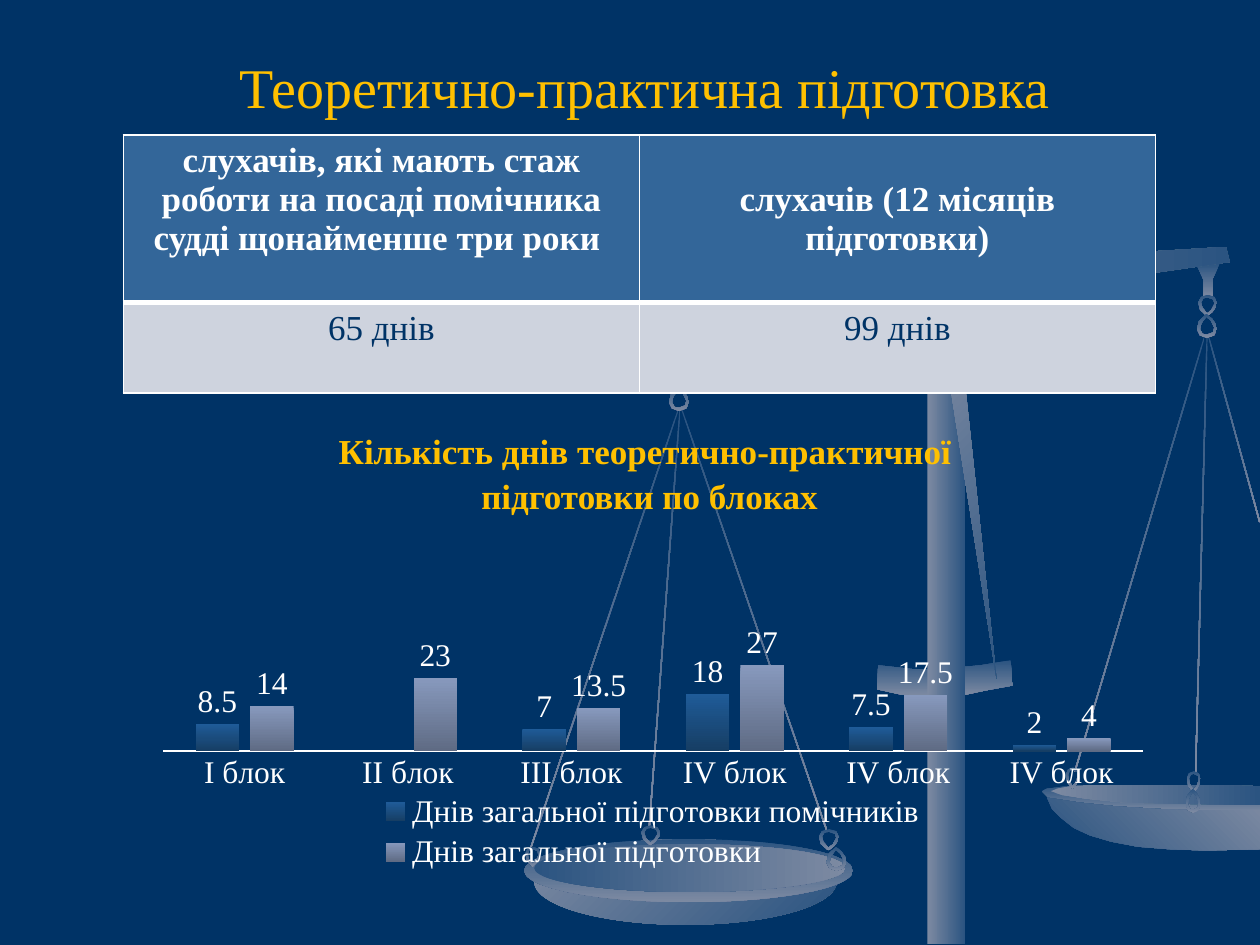
import pptx
import pptx.util
import pptx.chart.data
import pptx.dml.color
import pptx.enum.chart
import pptx.enum.shapes
import pptx.enum.text
import pptx.oxml
import pptx.oxml.ns

FONT = "Times New Roman"
GOLD, WHITE, NAVY, BLUE, PALE = "FFC000", "FFFFFF", "003366", "336699", "CED3DE"
DARK, LIGHT = "2B5481", "7D8AA2"
TITLE = "Теоретично-практична підготовка"
HEADING = ["Кількість днів теоретично-практичної ", "підготовки по блоках"]
ROWS = [
    ["слухачів, які мають стаж роботи на посаді помічника судді щонайменше три роки ",
     "слухачів (12 місяців підготовки)"],
    ["65 днів", "99 днів"],
]
HEIGHTS = [1.33, 0.72]
CATS = ["І блок", "ІІ блок", "ІІІ блок", "IV блок", "IV блок", "IV блок"]
SERIES = [
    ("Днів загальної підготовки помічників", [8.5, None, 7, 18, 7.5, 2], "1F5B98", "163E64"),
    ("Днів загальної підготовки ", [14, 23, 13.5, 27, 17.5, 4], "8799BD", "5F6B84"),
]
PLOT = {"x": 0.019, "y": 0.41, "w": 0.963, "h": 0.256}

CORDS = [(9.04, 2.6, 3.6, 16.6), (9.53, 2.66, 3.47, 1.5), (9.79, 2.64, 1.53, 344.6),
         (5.98, 3.15, 3.53, 341), (4.79, 3.16, 3.68, 18.6), (5.27, 3.25, 3.31, 4.2)]
BRACE = [(6.97, 5.28), (7.24, 5.31), (7.39, 5.31), (7.57, 5.3), (7.78, 5.28), (8.02, 5.24),
         (8.04, 5.44), (7.82, 5.48), (7.68, 5.51), (7.51, 5.52), (7.33, 5.52), (7.14, 5.51),
         (6.96, 5.47)]
RIM = [(9.58, 6.24), (9.1, 6.24), (8.75, 6.23), (8.46, 6.24), (8.31, 6.26), (8.27, 6.28),
       (8.32, 6.33), (8.42, 6.36), (8.63, 6.39), (8.94, 6.42), (9.35, 6.44), (9.58, 6.45),
       (10, 6.45), (10, 6.26), (9.8, 6.26)]
BOWL = [(8.31, 6.33), (8.35, 6.42), (8.42, 6.49), (8.52, 6.57), (8.65, 6.63), (8.82, 6.68),
        (9.03, 6.72), (9.28, 6.74), (9.57, 6.75), (10, 6.74), (10, 6.43), (9.53, 6.43),
        (9.18, 6.42), (8.86, 6.4), (8.57, 6.37)]
DISH = [(9.56, 6.23), (8.77, 6.23), (8.51, 6.24), (8.39, 6.26), (8.34, 6.28), (8.43, 6.31),
        (8.63, 6.34), (8.93, 6.37), (9.33, 6.38), (10, 6.39), (10, 6.24)]
BEAM = [(9.73, 1.96), (9.76, 2.08), (5.25, 2.73), (5.24, 2.64), (7.37, 2.12), (7.59, 2.09)]
STAY = [(7.91, 5.39), (7.5, 2.8), (7.48, 2.68), (7.6, 2.65), (7.63, 2.77)]
DOME = [(7.52, 2.47), (7.63, 2.48), (7.72, 2.53), (7.77, 2.6), (7.79, 2.71), (7.24, 2.71),
        (7.26, 2.6), (7.32, 2.53), (7.4, 2.48)]
HOOK = [(1, 0), (0, 0.07), (0.28, 0.47), (0.28, 1), (0.7, 1), (0.7, 0.45)]
DROP = [[(0.47, 1), (0.75, 0.8), (0.95, 0.55), (1, 0.35), (0.85, 0.1), (0.5, 0), (0.15, 0.1),
         (0, 0.35), (0.1, 0.7)],
        [(0.5, 0.13), (0.8, 0.22), (0.86, 0.42), (0.7, 0.7), (0.47, 0.87), (0.22, 0.6),
         (0.15, 0.35), (0.28, 0.16)]]
HOOKS = [(5.31, 2.68, 0.18, 0.27), (9.5, 2.09, 0.18, 0.27)]
LINKS = [(8.46, 6.09, 0.11, 0.17, 0), (5.31, 2.93, 0.16, 0.17, 0), (5.31, 3.07, 0.16, 0.19, 1),
         (9.51, 2.34, 0.15, 0.17, 0), (9.5, 2.49, 0.16, 0.19, 1), (9.42, 6.12, 0.11, 0.17, 0),
         (5.09, 6.55, 0.15, 0.16, 0), (6.56, 6.72, 0.16, 0.19, 1), (4.17, 6.72, 0.12, 0.16, 0),
         (6.5, 6.58, 0.16, 0.17, 0), (9.41, 6.26, 0.12, 0.19, 1)]
PANS = [(4.24, 6.66, 2.4, 0.68, LIGHT, DARK, 45), (4.16, 6.66, 2.61, 0.5, DARK, LIGHT, 90),
        (4.24, 6.7, 2.47, 0.38, DARK, LIGHT, 0)]

KIND = pptx.enum.shapes.MSO_SHAPE
MID = pptx.enum.text.PP_ALIGN.CENTER
Pt = pptx.util.Pt


def inch(*nums):
    return [pptx.util.Cm(n * 2.54) for n in nums]


def tint(code):
    return pptx.dml.color.RGBColor.from_string(code)


def paint(fill, code):
    fill.solid()
    fill.fore_color.rgb = tint(code)


def blend(fill, start, end, angle):
    fill.gradient()
    fill.gradient_angle = (360 - angle) % 360
    for stop, code in zip(fill.gradient_stops, (start, end)):
        stop.color.rgb = tint(code)


def style(font, size, code, bold=False):
    font.name, font.size, font.bold = FONT, Pt(size), bold
    font.color.rgb = tint(code)


def write(para, text, size, code, bold=False):
    para.alignment = MID
    run = para.add_run()
    run.text = text
    style(run.font, size, code, bold)


def finish(shape, start=DARK, end=LIGHT, angle=90):
    shape.shadow.inherit = False
    shape.line.fill.background()
    blend(shape.fill, start, end, angle)
    return shape


def preset(slide, kind, box, *look):
    return finish(slide.shapes.add_shape(kind, *inch(*box)), *look)


def trace(slide, loops, *look):
    loops = [[inch(*spot) for spot in loop] for loop in loops]
    pen = slide.shapes.build_freeform(*loops[0][0])
    for loop in loops:
        if loop is not loops[0]:
            pen.move_to(*loop[0])
        pen.add_line_segments(loop[1:])
    return finish(pen.convert_to_shape(), *look)


def fit(loop, x, y, w, h, flip=0):
    return [(x + w * u, y + h * (1 - v if flip else v)) for u, v in loop]


def scales(slide):
    preset(slide, KIND.RECTANGLE, (7.34, 2.37, 0.34, 0.18))
    preset(slide, KIND.OVAL, (7.46, 2.06, 0.08, 0.08))
    for x, y, long, turn in CORDS:
        preset(slide, KIND.RECTANGLE, (x, y, 0.01, long)).rotation = turn
    trace(slide, [BRACE])
    trace(slide, [RIM])
    trace(slide, [BOWL], DARK, LIGHT, 315)
    trace(slide, [DISH], LIGHT, DARK, 0)
    for box in HOOKS:
        trace(slide, [fit(HOOK, *box)])
    trace(slide, [BEAM], LIGHT, DARK, 0)
    for *box, start, end, angle in PANS:
        preset(slide, KIND.OVAL, box, start, end, angle)
    for link in LINKS:
        trace(slide, [fit(loop, *link) for loop in DROP])
    preset(slide, KIND.RECTANGLE, (7.36, 3.08, 0.3, 4.41), LIGHT, DARK, 0)
    preset(slide, KIND.RECTANGLE, (7.44, 2.68, 0.13, 0.42))
    preset(slide, KIND.ROUNDED_RECTANGLE, (7.33, 3.03, 0.36, 0.09))
    trace(slide, [STAY], LIGHT, DARK, 45)
    trace(slide, [DOME], LIGHT, DARK, 0)


def border(cell, low):
    props = cell._tc.get_or_add_tcPr()
    for spot, (side, wide) in enumerate([("L", 1), ("R", 1), ("T", 1), ("B", low)]):
        props.insert(spot, pptx.oxml.parse_xml(
            f'<a:ln{side} {pptx.oxml.ns.nsdecls("a")} w="{wide * 12700}"><a:solidFill>'
            f'<a:srgbClr val="{WHITE}"/></a:solidFill></a:ln{side}>'))


def grid(slide):
    table = slide.shapes.add_table(2, 2, *inch(0.98, 1.07, 8.19, sum(HEIGHTS))).table
    table.horz_banding = False
    for r, texts in enumerate(ROWS):
        table.rows[r].height = inch(HEIGHTS[r])[0]
        for c, text in enumerate(texts):
            cell = table.cell(r, c)
            paint(cell.fill, PALE if r else BLUE)
            border(cell, 1 if r else 3)
            write(cell.text_frame.paragraphs[0], text, 20, NAVY if r else WHITE, not r)
    table.cell(0, 1).margin_top = inch(0.36)[0]


def graph(slide):
    data = pptx.chart.data.CategoryChartData()
    data.categories = CATS
    for name, vals, *_ in SERIES:
        data.add_series(name, vals)
    enum = pptx.enum.chart
    chart = slide.shapes.add_chart(enum.XL_CHART_TYPE.COLUMN_CLUSTERED,
                                   *inch(1.14, 3.99, 8.08, 2.96), data).chart
    style(chart.font, 18, WHITE)
    chart.has_title = False
    chart.has_legend = True
    chart.legend.position = enum.XL_LEGEND_POSITION.BOTTOM
    chart.legend.include_in_layout = False
    axis = chart.category_axis
    axis.major_tick_mark = enum.XL_TICK_MARK.NONE
    axis.format.line.color.rgb = tint(WHITE)
    chart.value_axis.visible = False
    chart.value_axis.has_major_gridlines = False
    chart.value_axis.minimum_scale, chart.value_axis.maximum_scale = 0, 30
    plot = chart.plots[0]
    plot.gap_width, plot.overlap, plot.vary_by_categories = 150, -25, False
    for bars, (_, _, top, low) in zip(plot.series, SERIES):
        blend(bars.format.fill, top, low, 90)
        bars.data_labels.show_value = True
        bars.data_labels.position = enum.XL_LABEL_POSITION.OUTSIDE_END
        style(bars.data_labels.font, 18, WHITE)
    area = chart._chartSpace.chart.plotArea
    for old in area.findall(pptx.oxml.ns.qn("c:layout")):
        area.remove(old)
    sizes = "".join(f'<c:{key} val="{val}"/>' for key, val in PLOT.items())
    area.insert(0, pptx.oxml.parse_xml(
        f'<c:layout {pptx.oxml.ns.nsdecls("c")}><c:manualLayout><c:layoutTarget val="inner"/>'
        f'<c:xMode val="edge"/><c:yMode val="edge"/>{sizes}</c:manualLayout></c:layout>'))


def main():
    """Build the training slide with its table, chart and scales."""
    deck = pptx.Presentation()
    deck.slide_width, deck.slide_height = inch(10, 7.5)
    slide = deck.slides.add_slide(deck.slide_layouts[5])
    paint(slide.background.fill, NAVY)
    scales(slide)
    title = slide.shapes.title
    title.left, title.top, title.width, title.height = inch(0.75, 0.36, 8.74, 0.64)
    title.text_frame.vertical_anchor = pptx.enum.text.MSO_ANCHOR.MIDDLE
    write(title.text_frame.paragraphs[0], TITLE, 32, GOLD)
    grid(slide)
    frame = slide.shapes.add_textbox(*inch(1.06, 3.36, 8.19, 0.79)).text_frame
    frame.word_wrap = True
    for n, text in enumerate(HEADING):
        para = frame.add_paragraph() if n else frame.paragraphs[0]
        para.space_before = Pt(1.5)
        write(para, text, 20, GOLD, True)
    graph(slide)
    deck.save("out.pptx")


if __name__ == "__main__":
    main()
